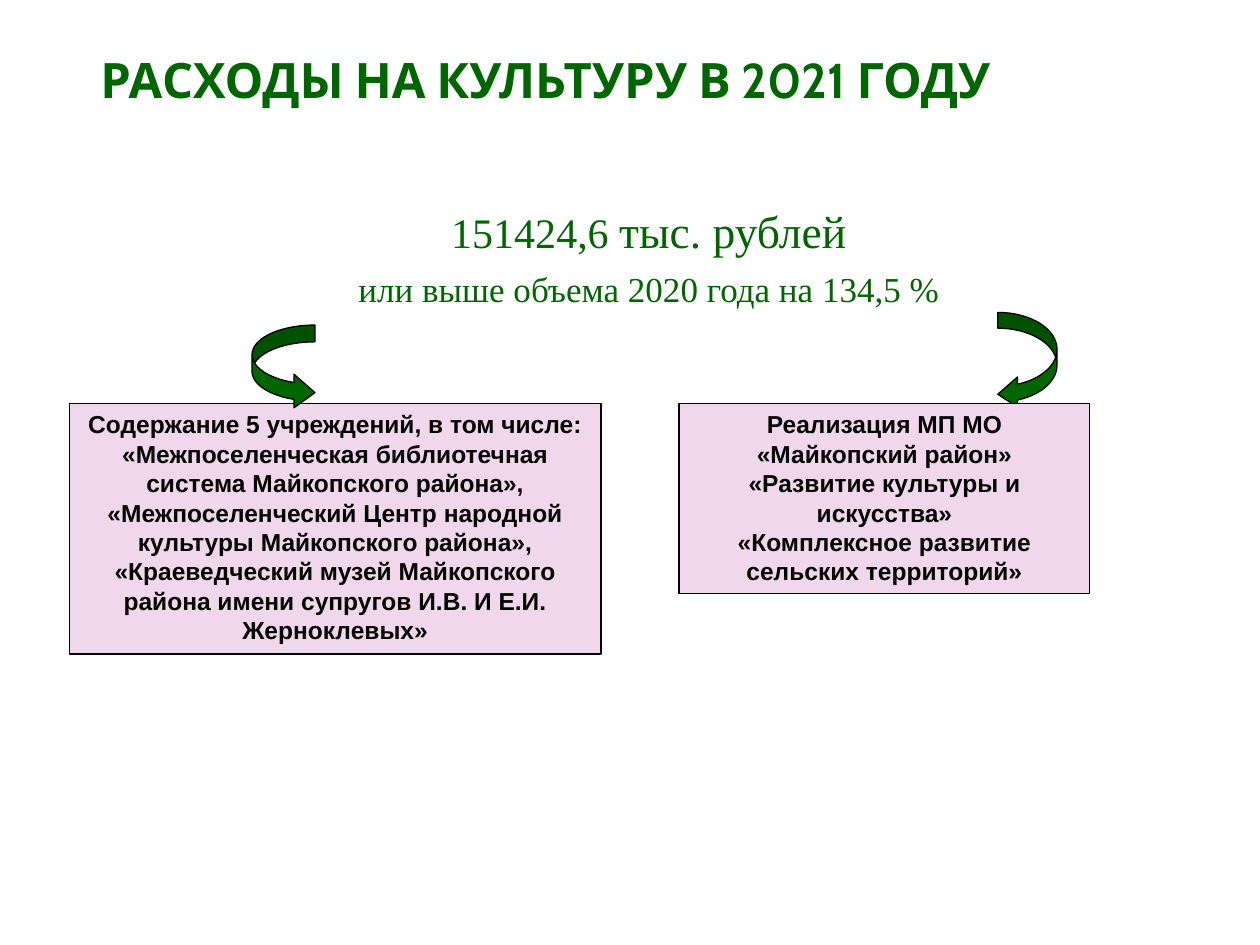
from dataclasses import dataclass

import pptx
import pptx.dml.color
import pptx.enum.shapes
import pptx.enum.text
import pptx.oxml
import pptx.oxml.ns
import pptx.util
from pptx.util import Inches

COLORS = {"green": "006600", "pink": "F1D7EC", "black": "000000"}
CENTER = pptx.enum.text.PP_ALIGN.CENTER
SHAPES = pptx.enum.shapes.MSO_SHAPE


@dataclass
class Box:
    left: float
    top: float
    width: float
    height: float


@dataclass
class ExpenseCard:
    box: Box
    lines: list[str]


@dataclass
class CurvedArrow:
    box: Box
    head_width: float
    flipped: bool = False


LEFT_ARROW = CurvedArrow(Box(2, 2.58, 0.5, 0.67), 0.533)
RIGHT_ARROW = CurvedArrow(Box(7.92, 2.48, 0.47, 0.77), 0.513, flipped=True)
CARDS = [
    ExpenseCard(Box(0.55, 3.2, 4.22, 1.99), [
        "Содержание 5 учреждений, в том числе:",
        "«Межпоселенческая библиотечная система Майкопского района»,",
        "«Межпоселенческий Центр народной культуры Майкопского района»,",
        "«Краеведческий музей Майкопского района имени супругов "
        "И.В. И Е.И. Жерноклевых»",
    ]),
    ExpenseCard(Box(5.39, 3.2, 3.26, 1.51), [
        "Реализация МП МО «Майкопский район» «Развитие культуры и искусства»",
        "«Комплексное развитие сельских территорий»",
    ]),
]


def rgb(name: str) -> pptx.dml.color.RGBColor:
    return pptx.dml.color.RGBColor.from_string(COLORS[name])


def place(shape, box: Box) -> None:
    shape.left, shape.top = Inches(box.left), Inches(box.top)
    shape.width, shape.height = Inches(box.width), Inches(box.height)


def style_font(font, name: str, size: float, color: str, bold: bool = False) -> None:
    font.name, font.size, font.bold = name, pptx.util.Pt(size), bold
    font.color.rgb = rgb(color)


def add_outlined(slide, kind, box: Box, fill: str):
    shape = slide.shapes.add_shape(kind, Inches(box.left), Inches(box.top),
                                   Inches(box.width), Inches(box.height))
    shape.shadow.inherit = False
    shape.fill.solid()
    shape.fill.fore_color.rgb = rgb(fill)
    shape.line.color.rgb = rgb("black")
    shape.line.width = pptx.util.Pt(0.75)
    return shape


def add_arrow(slide, arrow: CurvedArrow) -> None:
    shape = add_outlined(slide, SHAPES.CURVED_RIGHT_ARROW, arrow.box, "green")
    for index, value in enumerate((0.267, arrow.head_width, 0.333)):
        shape.adjustments[index] = value
    if arrow.flipped:
        shape._element.spPr.xfrm.set("flipH", "1")


def add_card(slide, card: ExpenseCard) -> None:
    frame = add_outlined(slide, SHAPES.RECTANGLE, card.box, "pink").text_frame
    frame.word_wrap = True
    frame.auto_size = pptx.enum.text.MSO_AUTO_SIZE.SHAPE_TO_FIT_TEXT
    frame.vertical_anchor = pptx.enum.text.MSO_ANCHOR.TOP
    frame.text = "\n".join(card.lines)
    for paragraph in frame.paragraphs:
        paragraph.alignment = CENTER
        style_font(paragraph.font, "Arial", 14, "black", bold=True)


def fill_title(title) -> None:
    place(title, Box(0.27, 0.21, 8.12, 1.1))
    frame = title.text_frame
    frame.auto_size = pptx.enum.text.MSO_AUTO_SIZE.NONE
    frame.vertical_anchor = pptx.enum.text.MSO_ANCHOR.BOTTOM
    frame.margin_left = frame.margin_right = Inches(0.05)
    frame.margin_top, frame.margin_bottom = 0, Inches(0.45)
    frame.text = "РАСХОДЫ НА КУЛЬТУРУ В 2021 ГОДУ"
    heading = frame.paragraphs[0]
    heading.alignment = CENTER
    style_font(heading.font, "Cabin", 27.9, "green", bold=True)


def fill_totals(body) -> None:
    place(body, Box(0.5, 1.56, 9.3, 5.57))
    frame = body.text_frame
    frame.auto_size = pptx.enum.text.MSO_AUTO_SIZE.NONE
    total, change = frame.paragraphs[0], frame.add_paragraph()
    for paragraph, space, size in ((total, 0, 26), (change, 6, 20)):
        paragraph.alignment = CENTER
        paragraph.space_before = pptx.util.Pt(space)
        properties = paragraph._p.get_or_add_pPr()
        properties.set("marL", str(Inches(0.3)))
        properties.set("indent", str(Inches(-0.3)))
        properties.append(pptx.oxml.parse_xml(
            f"<a:buNone {pptx.oxml.ns.nsdecls('a')}/>"))
        style_font(paragraph.font, "Times New Roman", size, "green")
    amount = total.add_run()
    amount.text = "151424,6 "
    amount.font.size = pptx.util.Pt(24)
    total.add_run().text = "тыс. рублей"
    change.add_run().text = "или выше объема 2020 года на 134,5 %"


def main() -> None:
    deck = pptx.Presentation()
    deck.slide_width, deck.slide_height = Inches(10), Inches(7.5)
    slide = deck.slides.add_slide(deck.slide_layouts[1])
    fill_title(slide.shapes.title)
    fill_totals(slide.placeholders[1])
    add_arrow(slide, RIGHT_ARROW)
    for card in CARDS:
        add_card(slide, card)
    add_arrow(slide, LEFT_ARROW)
    deck.save("out.pptx")


if __name__ == "__main__":
    main()
